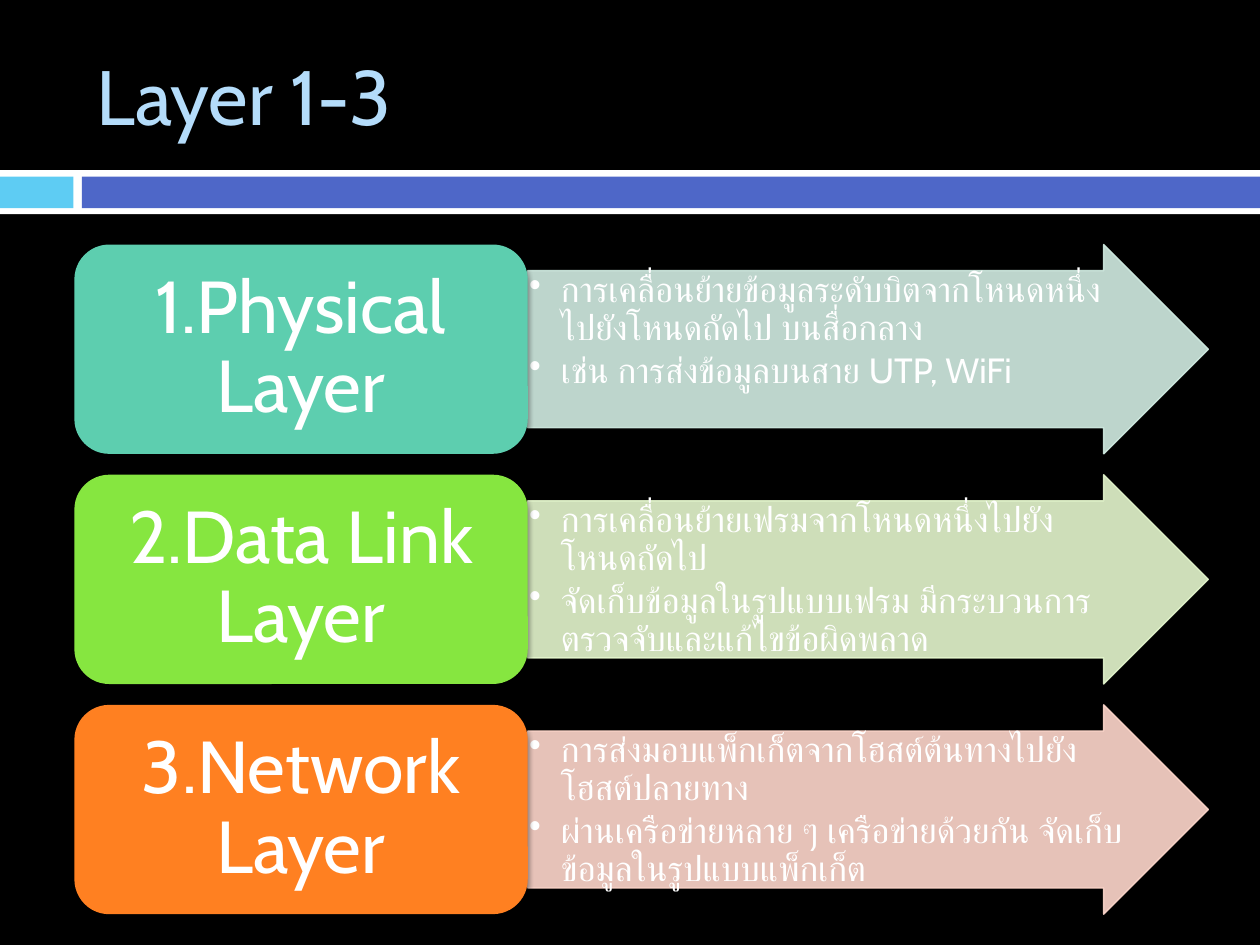
from lxml.etree import SubElement
from pptx import Presentation
from pptx.dml.color import RGBColor
from pptx.enum.shapes import MSO_SHAPE
from pptx.enum.text import MSO_ANCHOR, PP_ALIGN
from pptx.oxml.ns import qn
from pptx.util import Cm, Pt

LAYERS = [
    ("1.Physical Layer", "5DCEAF", "D2EDE3", [
        "การเคลื่อนย้ายข้อมูลระดับบิตจากโหนดหนึ่งไปยังโหนดถัดไป บนสื่อกลาง",
        "เช่น การส่งข้อมูลบนสาย UTP, WiFi"]),
    ("2.Data Link Layer", "86E640", "E5F7CE", [
        "การเคลื่อนย้ายเฟรมจากโหนดหนึ่งไปยังโหนดถัดไป",
        "จัดเก็บข้อมูลในรูปแบบเฟรม มีกระบวนการตรวจจับและแก้ไขข้อผิดพลาด"]),
    ("3.Network Layer", "FF8021", "FFD8CC", [
        "การส่งมอบแพ็กเก็ตจากโฮสต์ต้นทางไปยังโฮสต์ปลายทาง",
        "ผ่านเครือข่ายหลาย ๆ เครือข่ายด้วยกัน จัดเก็บข้อมูลในรูปแบบแพ็กเก็ต"]),
]
LEFT, TOP, STEP = 1.5, 4.93, 4.64
BLOCK_W, ARROW_W, ROW_H = 9.14, 13.72, 4.22


def color(code):
    return RGBColor.from_string(code)


class Deck:
    font = "Cabin"
    white = "FFFFFF"

    def __init__(self, slide):
        self.slide = slide

    def shape(self, kind, box, fill):
        item = self.slide.shapes.add_shape(kind, *map(Cm, box))
        item.fill.solid()
        item.fill.fore_color.rgb = color(fill)
        item.line.fill.background()
        item.shadow.inherit = False
        return item

    def frame(self, item, anchor, side, edge):
        frame = item.text_frame
        frame.word_wrap = True
        frame.vertical_anchor = anchor
        frame.margin_left = frame.margin_right = Cm(side)
        frame.margin_top = frame.margin_bottom = Cm(edge)
        return frame

    def style(self, para, size, code, align=PP_ALIGN.LEFT):
        para.alignment = align
        para.font.name = self.font
        para.font.size = Pt(size)
        para.font.color.rgb = color(code)

    def title(self, text, box):
        item = self.slide.shapes.add_textbox(*map(Cm, box))
        para = self.frame(item, MSO_ANCHOR.MIDDLE, 0.25, 0.13).paragraphs[0]
        para.text = text
        self.style(para, 44, "B4DCFA")

    def shade(self, item):
        """Add a soft shadow that falls straight down."""
        effects = item._element.spPr.find(qn("a:effectLst"))
        cast = SubElement(effects, qn("a:outerShdw"), blurRad=str(Pt(3)),
                          dist=str(Pt(2.4)), dir="5400000", rotWithShape="0")
        tint = SubElement(cast, qn("a:srgbClr"), val="000000")
        SubElement(tint, qn("a:alpha"), val="45000")

    def block(self, text, box, fill):
        item = self.shape(MSO_SHAPE.ROUNDED_RECTANGLE, box, fill)
        self.shade(item)
        para = self.frame(item, MSO_ANCHOR.MIDDLE, 0.42, 0.21).paragraphs[0]
        para.text = text
        para.line_spacing = 0.9
        self.style(para, 42, self.white, PP_ALIGN.CENTER)

    def arrow(self, points, box, fill):
        item = self.shape(MSO_SHAPE.RIGHT_ARROW, box, fill)
        item.adjustments[0] = 0.75
        item.line.color.rgb = color(fill)
        item.line.width = Pt(0.79)
        for tint in item._element.spPr.iter(qn("a:srgbClr")):
            SubElement(tint, qn("a:alpha"), val="90000")
        self.shade(item)
        frame = self.frame(item, MSO_ANCHOR.TOP, 0.03, 0.03)
        for i, point in enumerate(points):
            para = frame.add_paragraph() if i else frame.paragraphs[0]
            para.text = point
            para.line_spacing = 0.9
            para.space_after = Pt(3)
            self.bullet(para)
            self.style(para, 20, self.white)

    def bullet(self, para):
        props = para._p.get_or_add_pPr()
        props.set("marL", str(Cm(0.64)))
        props.set("indent", str(-Cm(0.64)))
        SubElement(props, qn("a:buChar"), char="•")


def main():
    show = Presentation()
    show.slide_width, show.slide_height = Cm(25.4), Cm(19.05)
    slide = show.slides.add_slide(show.slide_layouts[6])
    slide.background.fill.solid()
    slide.background.fill.fore_color.rgb = color("000000")
    deck = Deck(slide)

    for left, top, width, height, fill in [
            (0, 3.43, 25.4, 0.89, "FFFFFF"),
            (0, 3.56, 1.48, 0.64, "5ECCF3"),
            (1.65, 3.56, 23.75, 0.64, "4E67C8")]:
        deck.shape(MSO_SHAPE.RECTANGLE, (left, top, width, height), fill)
    deck.title("Layer 1-3", (1.7, 0.53, 22.66, 2.74))

    for row, (name, fill, pale, points) in enumerate(LAYERS):
        top = TOP + row * STEP
        deck.arrow(points, (LEFT + BLOCK_W, top, ARROW_W, ROW_H), pale)
        deck.block(name, (LEFT, top, BLOCK_W, ROW_H), fill)
    show.save("out.pptx")


if __name__ == "__main__":
    main()
